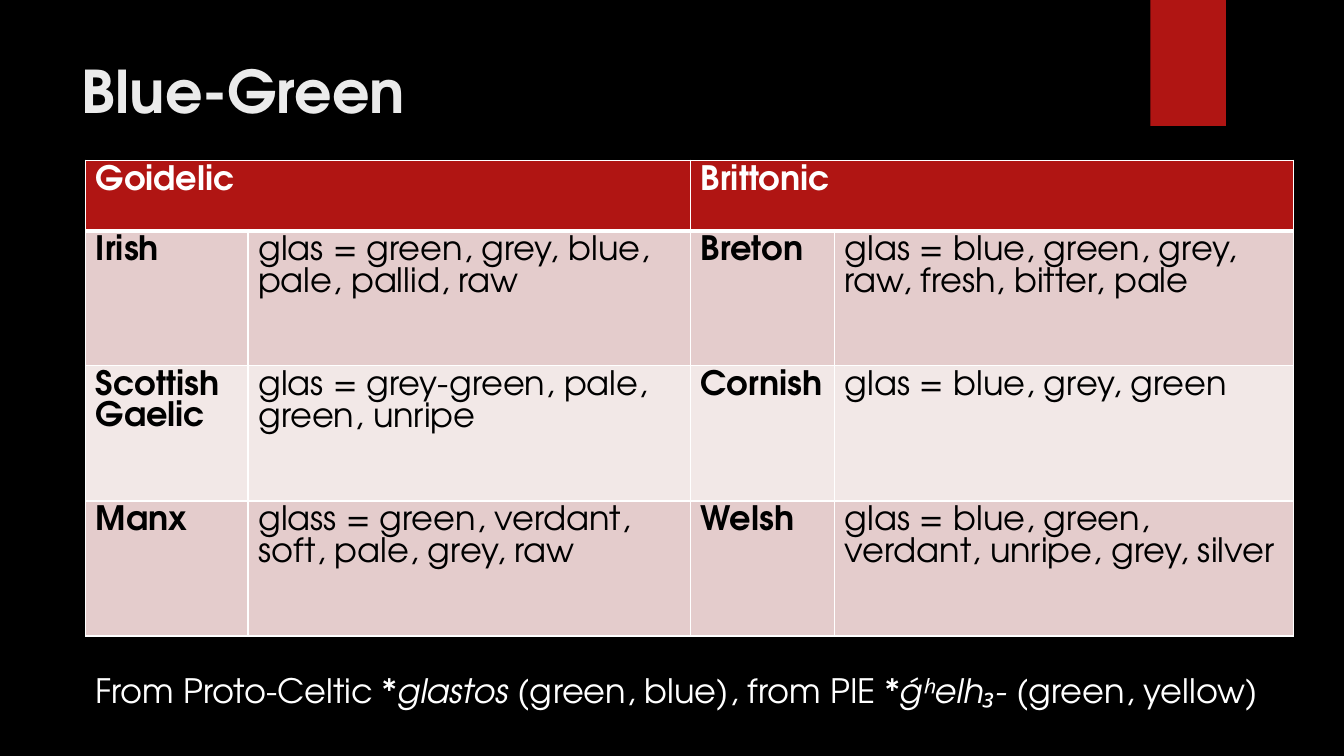
from lxml.etree import SubElement
from pptx import Presentation
from pptx.dml.color import RGBColor
from pptx.enum.shapes import MSO_SHAPE
from pptx.enum.text import MSO_ANCHOR
from pptx.oxml.ns import qn
from pptx.util import Inches, Pt

FONT = "TeX Gyre Adventor"
COLORS = {
    "background": "000000",
    "accent": "B01513",
    "title": "EBEBEB",
    "light": "FFFFFF",
    "dark": "000000",
    "odd_row": "E4CCCC",
    "even_row": "F2E8E7",
}
COLUMN_WIDTHS = (1.61, 4.39, 1.43, 4.55)
ROW_HEIGHTS = (0.7, 1.34, 1.34, 1.34)
BRANCHES = ("Goidelic", "Brittonic")
MEANINGS = (
    ("Irish", "glas = green, grey, blue, pale, pallid, raw",
     "Breton", "glas = blue, green, grey, raw, fresh, bitter, pale"),
    ("Scottish Gaelic", "glas = grey-green, pale, green, unripe",
     "Cornish", "glas = blue, grey, green"),
    ("Manx", "glass = green, verdant, soft, pale, grey, raw",
     "Welsh", "glas = blue, green, verdant, unripe, grey, silver"),
)
ETYMOLOGY = (
    ("From Proto-Celtic ", False),
    ("*glastos ", True),
    ("(green, blue), from PIE ", False),
    ("*ǵʰelh₃- ", True),
    ("(green, yellow)", False),
)


def rgb(name):
    return RGBColor.from_string(COLORS[name])


def add_run(paragraph, text, size, color, bold=False, italic=False):
    run = paragraph.add_run()
    run.text = text
    run.font.name = FONT
    run.font.size = Pt(size)
    run.font.bold = bold
    run.font.italic = italic
    run.font.color.rgb = rgb(color)


def add_text_area(slide, left, top, width, height):
    area = slide.shapes.add_textbox(
        Inches(left), Inches(top), Inches(width), Inches(height))
    area.text_frame.word_wrap = True
    area.text_frame.vertical_anchor = MSO_ANCHOR.TOP
    return area.text_frame.paragraphs[0]


def add_ribbon(slide):
    ribbon = slide.shapes.add_shape(
        MSO_SHAPE.RECTANGLE, Inches(11.41), 0, Inches(0.75), Inches(1.25))
    ribbon.shadow.inherit = False
    ribbon.fill.solid()
    ribbon.fill.fore_color.rgb = rgb("accent")
    ribbon.line.fill.background()


def set_borders(cell, top=1, bottom=1):
    properties = cell._tc.get_or_add_tcPr()
    widths = {"a:lnL": 1, "a:lnR": 1, "a:lnT": top, "a:lnB": bottom}
    for position, (tag, width) in enumerate(widths.items()):
        border = SubElement(properties, qn(tag), w=str(Pt(width)))
        fill = SubElement(border, qn("a:solidFill"))
        SubElement(fill, qn("a:srgbClr"), val=COLORS["light"])
        properties.insert(position, border)


def fill_cell(cell, text, background, color, bold, **borders):
    cell.fill.solid()
    cell.fill.fore_color.rgb = rgb(background)
    set_borders(cell, **borders)
    if text:
        add_run(cell.text_frame.paragraphs[0], text, 24, color, bold)


def add_meanings_table(slide):
    table = slide.shapes.add_table(
        len(ROW_HEIGHTS), len(COLUMN_WIDTHS), Inches(0.85), Inches(1.59),
        Inches(sum(COLUMN_WIDTHS)), Inches(sum(ROW_HEIGHTS))).table
    for column, width in zip(table.columns, COLUMN_WIDTHS):
        column.width = Inches(width)
    for row, height in zip(table.rows, ROW_HEIGHTS):
        row.height = Inches(height)
    for index, branch in enumerate(BRANCHES):
        first, second = table.cell(0, 2 * index), table.cell(0, 2 * index + 1)
        first.merge(second)
        fill_cell(first, branch, "accent", "light", True, bottom=3)
        fill_cell(second, "", "accent", "light", True, bottom=3)
    for row, entries in enumerate(MEANINGS, start=1):
        background = "odd_row" if row % 2 else "even_row"
        for column, entry in enumerate(entries):
            fill_cell(table.cell(row, column), entry, background, "dark",
                      column % 2 == 0, top=3 if row == 1 else 1)


def main():
    deck = Presentation()
    deck.slide_width, deck.slide_height = Inches(13.33), Inches(7.5)
    slide = deck.slides.add_slide(deck.slide_layouts[6])
    slide.background.fill.solid()
    slide.background.fill.fore_color.rgb = rgb("background")
    add_ribbon(slide)
    title = add_text_area(slide, 0.71, 0.49, 10.29, 1.1)
    add_run(title, "Blue-Green", 42, "title", bold=True)
    add_meanings_table(slide)
    etymology = add_text_area(slide, 0.85, 6.6, 12.48, 0.5)
    for text, italic in ETYMOLOGY:
        add_run(etymology, text, 24, "light", italic=italic)
    deck.save("out.pptx")


if __name__ == "__main__":
    main()
